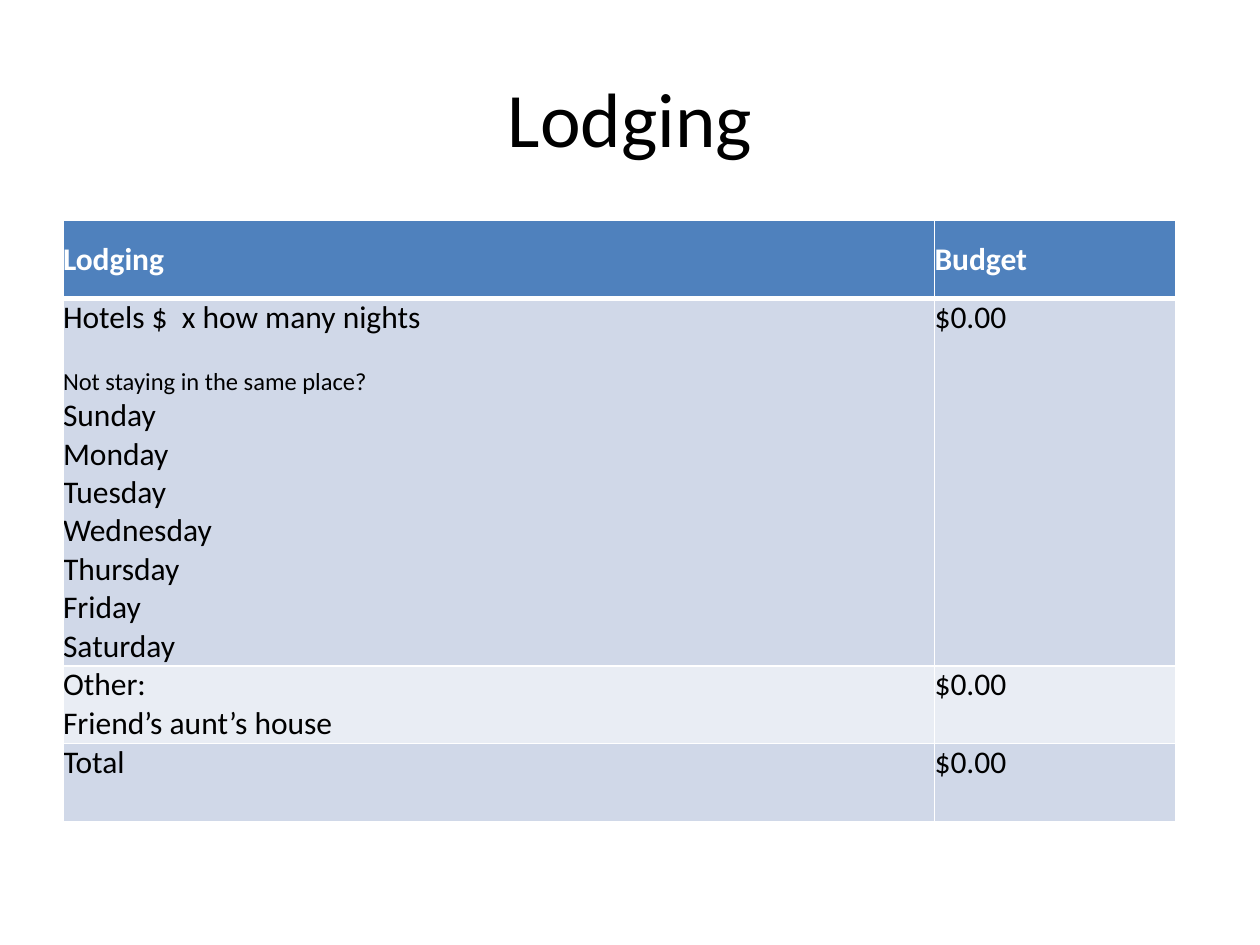
from dataclasses import dataclass

from lxml.etree import SubElement
from pptx import Presentation
from pptx.dml.color import RGBColor
from pptx.enum.text import MSO_ANCHOR, PP_ALIGN
from pptx.oxml import parse_xml
from pptx.oxml.ns import nsdecls, qn
from pptx.util import Cm, Pt


@dataclass(frozen=True)
class Theme:
    """Colours, font and type sizes of the slide."""
    font: str = "Calibri"
    ink: str = "000000"
    paper: str = "FFFFFF"
    header: str = "4F81BD"
    bands: tuple = ("D0D8E8", "E9EDF4")
    title_size: int = 44
    body_size: int = 18
    note_size: int = 14
    rule: int = 1
    header_rule: int = 3


THEME = Theme()
NOTE = "Not staying in the same place?"
DAYS = ["Sunday", "Monday", "Tuesday", "Wednesday", "Thursday", "Friday", "Saturday"]
BUDGET = [
    (["Lodging"], ["Budget"]),
    (["Hotels $  x how many nights", NOTE, *DAYS], ["$0.00"]),
    (["Other:", "Friend’s aunt’s house"], ["$0.00"]),
    (["Total"], ["$0.00"]),
]
COLUMN_WIDTHS = [Cm(17.57), Cm(4.87)]
ROW_HEIGHTS = [Cm(1.57), Cm(7.33), Cm(1.57), Cm(1.57)]


def write_line(paragraph, text, size=THEME.body_size, color=THEME.ink,
               bold=False, align=PP_ALIGN.LEFT, before=0):
    """Write one formatted line into a paragraph."""
    paragraph.alignment = align
    paragraph.space_before = Pt(before)
    run = paragraph.add_run()
    run.text = text
    run.font.name = THEME.font
    run.font.size = Pt(size)
    run.font.bold = bold
    run.font.color.rgb = RGBColor.from_string(color)


def set_borders(cell, top, bottom):
    """Draw the white rules around a cell, with widths in points."""
    properties = cell._tc.get_or_add_tcPr()
    widths = {"lnL": THEME.rule, "lnR": THEME.rule, "lnT": top, "lnB": bottom}
    for position, (side, width) in enumerate(widths.items()):
        border = parse_xml(f'<a:{side} {nsdecls("a")} w="{Pt(width)}"/>')
        fill = SubElement(border, qn("a:solidFill"))
        SubElement(fill, qn("a:srgbClr"), val=THEME.paper)
        properties.insert(position, border)


def fill_cell(cell, lines, row):
    """Format a budget cell for its row and write its lines."""
    is_header = row == 0
    cell.margin_left = cell.margin_right = cell.margin_top = cell.margin_bottom = 0
    cell.vertical_anchor = MSO_ANCHOR.MIDDLE if is_header else MSO_ANCHOR.TOP
    cell.fill.solid()
    background = THEME.header if is_header else THEME.bands[(row - 1) % 2]
    cell.fill.fore_color.rgb = RGBColor.from_string(background)
    set_borders(cell,
                top=THEME.header_rule if row == 1 else THEME.rule,
                bottom=THEME.header_rule if is_header else THEME.rule)
    for index, line in enumerate(lines):
        frame = cell.text_frame
        paragraph = frame.add_paragraph() if index else frame.paragraphs[0]
        is_note = line == NOTE
        write_line(paragraph, line, bold=is_header,
                   color=THEME.paper if is_header else THEME.ink,
                   size=THEME.note_size if is_note else THEME.body_size,
                   before=17 if is_note else 0)


def add_title(slide, text):
    """Place and format the slide title."""
    title = slide.shapes.title
    title.left, title.top, title.width, title.height = Cm(1.27), Cm(0.76), Cm(22.86), Cm(3.18)
    title.text_frame.vertical_anchor = MSO_ANCHOR.MIDDLE
    write_line(title.text_frame.paragraphs[0], text,
               size=THEME.title_size, align=PP_ALIGN.CENTER)


def add_budget(slide):
    """Add the lodging budget table."""
    budget = slide.shapes.add_table(len(BUDGET), len(COLUMN_WIDTHS), Cm(1.27), Cm(4.45),
                                    sum(COLUMN_WIDTHS), sum(ROW_HEIGHTS)).table
    for column, width in zip(budget.columns, COLUMN_WIDTHS):
        column.width = width
    for row, (height, entries) in enumerate(zip(ROW_HEIGHTS, BUDGET)):
        budget.rows[row].height = height
        for column, lines in enumerate(entries):
            fill_cell(budget.cell(row, column), lines, row)


def main():
    """Build the lodging slide and save it."""
    deck = Presentation()
    deck.slide_width, deck.slide_height = Cm(25.4), Cm(19.05)
    slide = deck.slides.add_slide(deck.slide_layouts[5])
    add_title(slide, "Lodging")
    add_budget(slide)
    deck.save("out.pptx")


if __name__ == "__main__":
    main()
